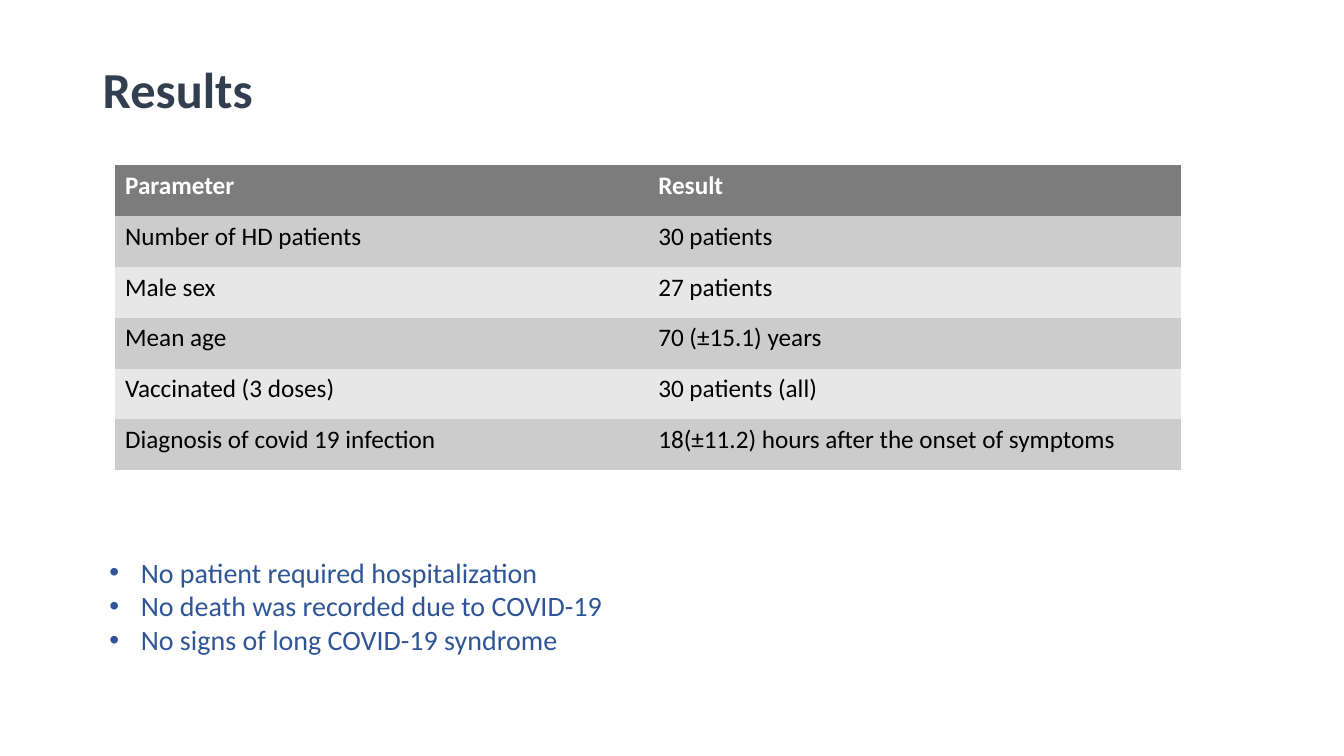
from dataclasses import dataclass

from lxml import etree
from pptx import Presentation
from pptx import util as u
from pptx.dml.color import RGBColor
from pptx.enum import text
from pptx.oxml.ns import qn


@dataclass(frozen=True)
class Theme:
    font: str = "Calibri"
    title_size: int = 36
    table_size: int = 18
    bullet_size: int = 20
    title_color: str = "333F50"
    bullet_color: str = "2F5597"
    header_fill: str = "7C7C7C"
    header_color: str = "FFFFFF"
    body_color: str = "000000"
    band_fills: tuple = ("CCCCCC", "E7E7E7")
    plain_table_style: str = "{2D5ABB26-0587-4C30-8999-92F81FD0307C}"


class SlideBuilder:
    def __init__(self, slide, theme):
        self.slide = slide
        self.theme = theme

    def add_run(self, paragraph, words, size, color, bold=False):
        run = paragraph.add_run()
        run.text = words
        run.font.name = self.theme.font
        run.font.size = u.Pt(size)
        run.font.bold = bold
        run.font.color.rgb = RGBColor.from_string(color)

    def add_frame(self, left, top, width, height):
        shape = self.slide.shapes.add_textbox(
            u.Cm(left), u.Cm(top), u.Cm(width), u.Cm(height))
        shape.text_frame.word_wrap = True
        return shape.text_frame

    def add_title(self, words, *box):
        frame = self.add_frame(*box)
        frame.vertical_anchor = text.MSO_ANCHOR.MIDDLE
        paragraph = frame.paragraphs[0]
        paragraph.line_spacing = 0.9
        self.add_run(paragraph, words, self.theme.title_size,
                     self.theme.title_color, bold=True)

    def add_table(self, rows, left, top, width, row_height):
        theme = self.theme
        shape = self.slide.shapes.add_table(
            len(rows), len(rows[0]), u.Cm(left), u.Cm(top),
            u.Cm(width), u.Cm(row_height * len(rows)))
        table = shape.table
        # A plain style leaves the cells without borders
        style = table._tbl.tblPr.find(qn("a:tableStyleId"))
        style.text = theme.plain_table_style
        for row_index, row in enumerate(rows):
            header = row_index == 0
            fill = theme.header_fill if header else theme.band_fills[(row_index - 1) % 2]
            color = theme.header_color if header else theme.body_color
            for column_index, words in enumerate(row):
                cell = table.cell(row_index, column_index)
                cell.fill.solid()
                cell.fill.fore_color.rgb = RGBColor.from_string(fill)
                self.add_run(cell.text_frame.paragraphs[0], words,
                             theme.table_size, color, bold=header)

    def add_bullets(self, items, indent, *box):
        frame = self.add_frame(*box)
        frame.auto_size = text.MSO_AUTO_SIZE.SHAPE_TO_FIT_TEXT
        for index, words in enumerate(items):
            paragraph = frame.add_paragraph() if index else frame.paragraphs[0]
            properties = paragraph._p.get_or_add_pPr()
            properties.set("marL", str(u.Cm(indent)))
            properties.set("indent", str(-u.Cm(indent)))
            etree.SubElement(properties, qn("a:buFont"), typeface="Arial")
            etree.SubElement(properties, qn("a:buChar"), char="•")
            self.add_run(paragraph, words, self.theme.bullet_size,
                         self.theme.bullet_color)


def main():
    presentation = Presentation()
    presentation.slide_width = u.Cm(33.87)
    presentation.slide_height = u.Cm(19.05)
    slide = presentation.slides.add_slide(presentation.slide_layouts[6])
    builder = SlideBuilder(slide, Theme())

    # Title
    builder.add_title("Results", 2.34, 0.48, 29.21, 3.68)

    # Patient parameters
    builder.add_table([
        ("Parameter", "Result"),
        ("Number of HD patients", "30 patients"),
        ("Male sex", "27 patients"),
        ("Mean age", "70 (±15.1) years"),
        ("Vaccinated (3 doses)", "30 patients (all)"),
        ("Diagnosis of covid 19 infection",
         "18(±11.2) hours after the onset of symptoms"),
    ], left=2.9, top=4.17, width=26.87, row_height=1.28)

    # Outcomes
    builder.add_bullets([
        "No patient required hospitalization",
        "No death was recorded due to COVID-19",
        "No signs of long COVID-19 syndrome",
    ], 0.79, 2.51, 13.87, 28.85, 2.82)

    presentation.save("out.pptx")


if __name__ == "__main__":
    main()
